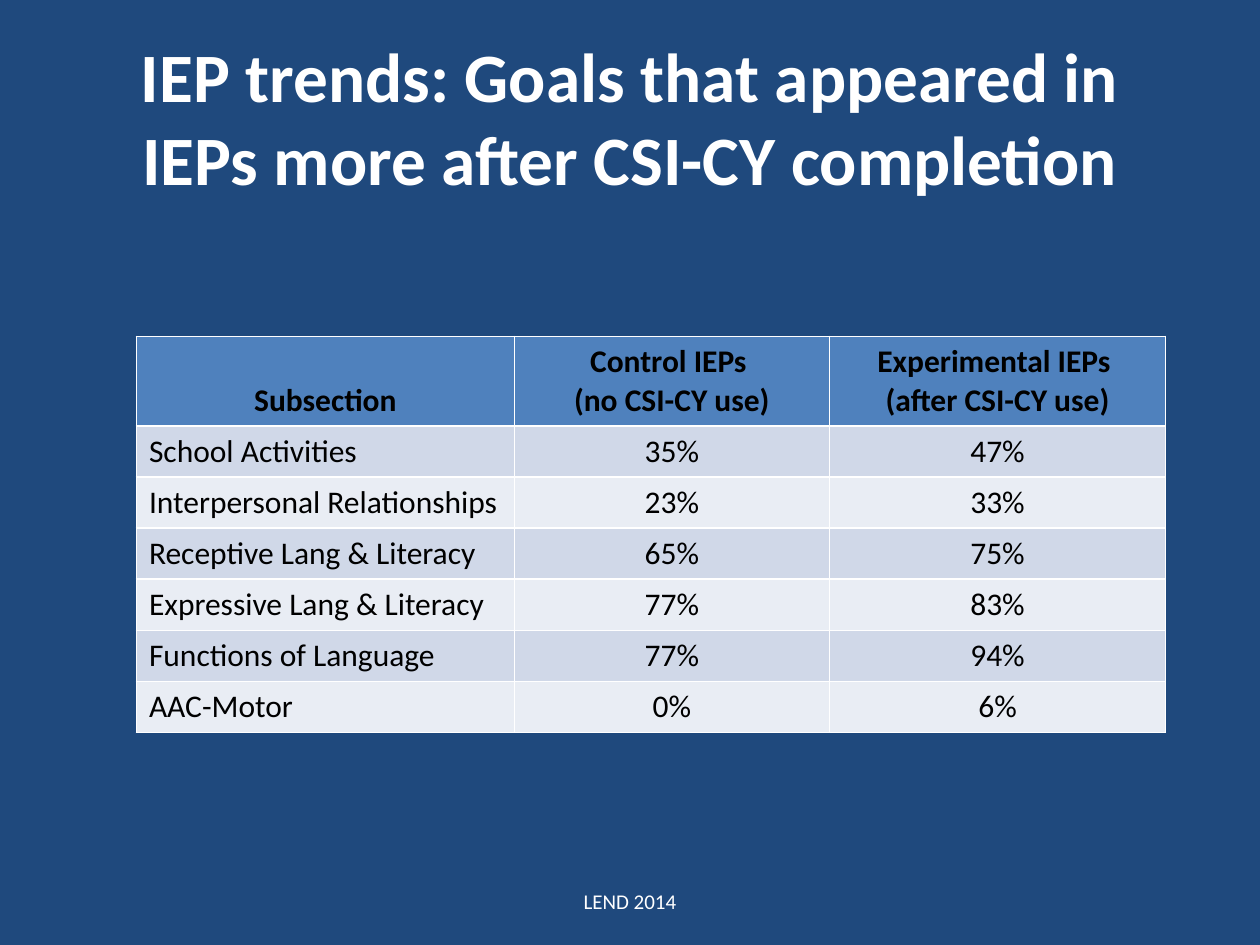
from dataclasses import dataclass

from lxml.etree import SubElement
from pptx import Presentation
from pptx.dml.color import RGBColor
from pptx.enum.text import MSO_ANCHOR as Anchor, MSO_AUTO_SIZE as AutoSize, PP_ALIGN as Align
from pptx.oxml.ns import qn
from pptx.util import Cm, Pt


@dataclass(frozen=True)
class Theme:
    font: str = "Calibri"
    background: str = "1F497D"
    light: str = "FFFFFF"
    dark: str = "000000"
    header_fill: str = "4F81BD"
    band_fills: tuple = ("D0D8E8", "E9EDF4")
    title_size: float = 39.6
    table_size: int = 18
    footer_size: int = 12
    border_width: int = 1


THEME = Theme()
TITLE_ONLY = 5

TITLE = "IEP trends: Goals that appeared in IEPs more after CSI-CY completion"
FOOTER = "LEND 2014"
HEADERS = ("Subsection", "Control IEPs \n(no CSI-CY use)", "Experimental IEPs \n(after CSI-CY use)")
GOALS = (
    ("School Activities", "35%", "47%"),
    ("Interpersonal Relationships", "23%", "33%"),
    ("Receptive Lang & Literacy", "65%", "75%"),
    ("Expressive Lang & Literacy", "77%", "83%"),
    ("Functions of Language", "77%", "94%"),
    ("AAC-Motor", "0%", "6%"),
)
COLUMN_WIDTHS = (7.62, 6.35, 6.78)
HEADER_HEIGHT, ROW_HEIGHT = 1.8, 1.03


def apply_format(target, values):
    for name, value in values.items():
        setattr(target, name, value)


def write_text(frame, text, size, color, align=Align.CENTER, bold=False):
    frame.text = text
    for paragraph in frame.paragraphs:
        paragraph.alignment = align
        for run in paragraph.runs:
            apply_format(run.font, {"name": THEME.font, "size": Pt(size), "bold": bold})
            run.font.color.rgb = RGBColor.from_string(color)


def place(shape, left, top, width, height):
    apply_format(shape, {"left": Cm(left), "top": Cm(top), "width": Cm(width), "height": Cm(height)})


def add_title(slide):
    title = slide.shapes.title
    place(title, 1.27, 0.76, 22.86, 3.18)
    apply_format(title.text_frame, {"auto_size": AutoSize.NONE, "vertical_anchor": Anchor.MIDDLE})
    write_text(title.text_frame, TITLE, THEME.title_size, THEME.light, bold=True)


def add_borders(cell):
    properties = cell._tc.get_or_add_tcPr()
    for side in ("lnL", "lnR", "lnT", "lnB"):
        line = SubElement(properties, qn(f"a:{side}"), w=str(Pt(THEME.border_width)))
        fill = SubElement(line, qn("a:solidFill"))
        SubElement(fill, qn("a:srgbClr"), val=THEME.light)


def style_cell(cell, text, fill, **text_format):
    add_borders(cell)
    cell.fill.solid()
    cell.fill.fore_color.rgb = RGBColor.from_string(fill)
    write_text(cell.text_frame, text, THEME.table_size, THEME.dark, **text_format)


def add_goal_table(slide):
    height = HEADER_HEIGHT + ROW_HEIGHT * len(GOALS)
    table = slide.shapes.add_table(
        len(GOALS) + 1, len(HEADERS), Cm(2.75), Cm(6.78), Cm(sum(COLUMN_WIDTHS)), Cm(height)
    ).table
    for column, width in zip(table.columns, COLUMN_WIDTHS):
        column.width = Cm(width)
    for index, row in enumerate(table.rows):
        row.height = Cm(ROW_HEIGHT if index else HEADER_HEIGHT)

    # Header row
    for column, text in enumerate(HEADERS):
        cell = table.cell(0, column)
        style_cell(cell, text, THEME.header_fill, bold=True)
        cell.vertical_anchor = Anchor.BOTTOM

    # Banded goal rows
    for row, goal in enumerate(GOALS, start=1):
        fill = THEME.band_fills[(row - 1) % 2]
        for column, text in enumerate(goal):
            align = Align.CENTER if column else Align.LEFT
            style_cell(table.cell(row, column), text, fill, align=align)


def add_footer(slide):
    footer = slide.shapes.add_textbox(Cm(8.68), Cm(17.65), Cm(8.04), Cm(1.02))
    apply_format(footer.text_frame, {"word_wrap": True, "vertical_anchor": Anchor.MIDDLE})
    write_text(footer.text_frame, FOOTER, THEME.footer_size, THEME.light)


def main():
    presentation = Presentation()
    apply_format(presentation, {"slide_width": Cm(25.4), "slide_height": Cm(19.05)})
    slide = presentation.slides.add_slide(presentation.slide_layouts[TITLE_ONLY])
    slide.background.fill.solid()
    slide.background.fill.fore_color.rgb = RGBColor.from_string(THEME.background)

    add_title(slide)
    add_goal_table(slide)
    add_footer(slide)
    presentation.save("out.pptx")


if __name__ == "__main__":
    main()
